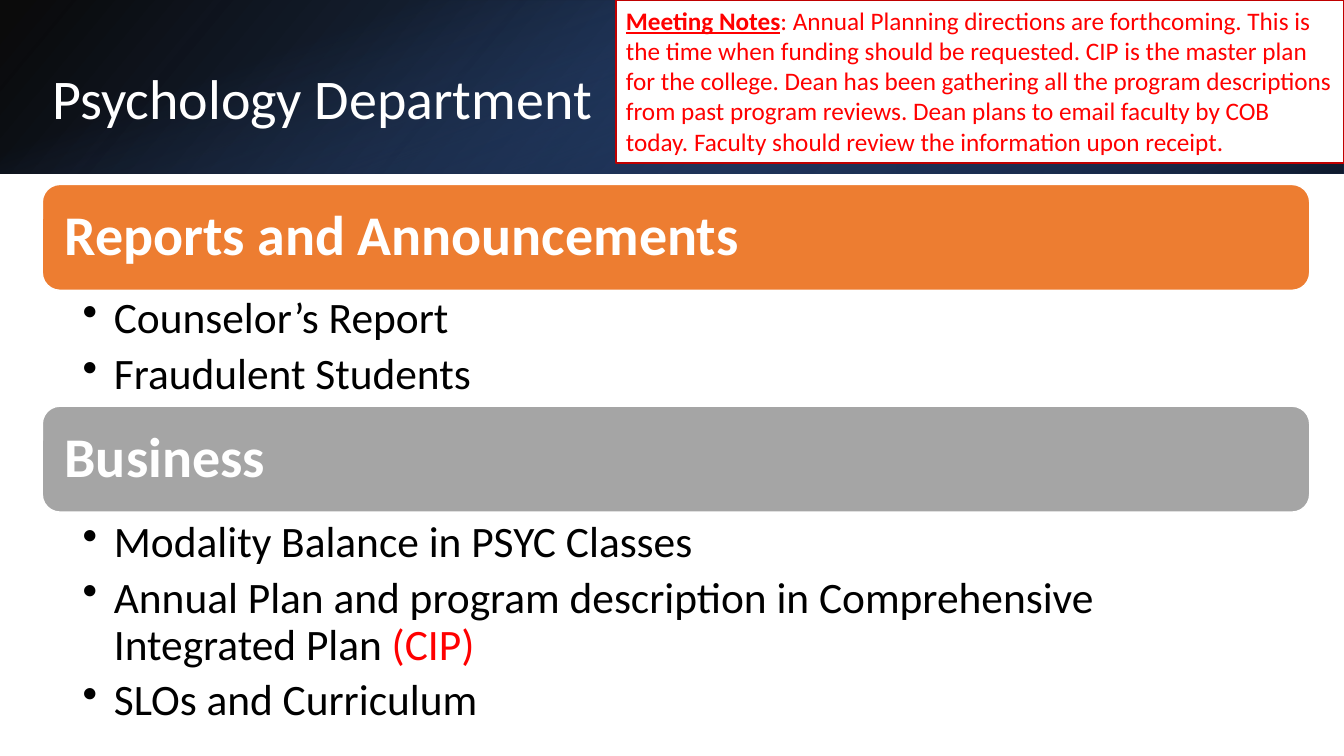
from pptx import Presentation
from pptx.dml.color import RGBColor
from pptx.enum.shapes import MSO_SHAPE as Preset
from pptx.enum.text import MSO_ANCHOR as Anchor, PP_ALIGN as Align
from pptx.oxml.ns import qn
from pptx.oxml.xmlchemy import OxmlElement
from pptx.util import Inches, Pt

WHITE, BLACK, RED = "FFFFFF", "000000", "FF0000"
FONT = "Calibri"

HEADER_LAYERS = [
    dict(at=(0, 0, 13.33, 1.72), flip=True, turn=0, angle=140,
         stops=[(0, BLACK, 96), (100, "2F5597", 100)]),
    dict(at=(8.89, 0, 4.44, 1.72), flip=True, turn=180, angle=320,
         stops=[(19, "203864", 68), (100, "4472C4", 79)]),
    dict(at=(5.8, -5.8, 1.72, 13.33), flip=False, turn=90, angle=340,
         stops=[(23, "4472C4", 0), (99, BLACK, 74)]),
]
TITLE = "Psychology Department"
SECTIONS = [
    dict(top=1.83, heading="Reports and Announcements", color="ED7D31",
         list_top=2.88, list_height=1.18,
         items=[[("Counselor’s Report", BLACK)],
                [("Fraudulent Students", BLACK)]]),
    dict(top=4.03, heading="Business", color="A5A5A5",
         list_top=5.1, list_height=2.22,
         items=[[("Modality Balance in PSYC Classes", BLACK)],
                [("Annual Plan and program description in Comprehensive "
                  "Integrated Plan ", BLACK), ("(CIP)", RED)],
                [("SLOs and Curriculum", BLACK)]]),
]
NOTES_LABEL = "Meeting Notes"
NOTES_TEXT = (
    ": Annual Planning directions are forthcoming. This is the time when "
    "funding should be requested. CIP is the master plan for the college. "
    "Dean has been gathering all the program descriptions from past program "
    "reviews. Dean plans to email faculty by COB today. Faculty should review "
    "the information upon receipt."
)
LEFT, WIDTH, BAR_HEIGHT = 0.42, 12.57, 1.05
BULLET_INDENT = 0.31


def paint(target, color):
    target.rgb = RGBColor.from_string(color)


def add_box(page, preset, at, fill=None, line=None, line_width=1):
    box = page.shapes.add_shape(preset, *map(Inches, at))
    box.shadow.inherit = False
    if fill:
        box.fill.solid()
        paint(box.fill.fore_color, fill)
    if line:
        paint(box.line.color, line)
        box.line.width = Pt(line_width)
    else:
        box.line.fill.background()
    return box


def add_header_layer(page, at, flip, turn, angle, stops):
    layer = add_box(page, Preset.RECTANGLE, at)
    layer.rotation = turn
    properties = layer.element.spPr
    if flip:
        properties.find(qn("a:xfrm")).set("flipH", "1")
    layer.fill.gradient()
    layer.fill.gradient_angle = 360 - angle
    for stop, (position, color, opacity) in zip(layer.fill.gradient_stops, stops):
        stop.position = position / 100
        paint(stop.color, color)
    for node, (_, _, opacity) in zip(properties.iter(qn("a:srgbClr")), stops):
        alpha = OxmlElement("a:alpha")
        alpha.set("val", str(opacity * 1000))
        node.append(alpha)


def set_frame(box, margins=(0.1, 0.05, 0.1, 0.05), anchor=Anchor.MIDDLE):
    frame = box.text_frame
    frame.word_wrap = True
    frame.vertical_anchor = anchor
    (frame.margin_left, frame.margin_top,
     frame.margin_right, frame.margin_bottom) = map(Inches, margins)
    return frame


def add_text(para, text, size, color, bold=False, underline=False, spacing=0.9):
    para.alignment = Align.LEFT
    para.line_spacing = spacing
    span = para.add_run()
    span.text = text
    span.font.name = FONT
    span.font.size = Pt(size)
    span.font.bold = bold
    span.font.underline = underline
    paint(span.font.color, color)


def add_bullet(para):
    properties = para._p.get_or_add_pPr()
    properties.set("marL", str(Inches(BULLET_INDENT)))
    properties.set("indent", str(-Inches(BULLET_INDENT)))
    bullet = OxmlElement("a:buChar")
    bullet.set("char", "•")
    properties.append(bullet)


def add_section(page, top, heading, color, list_top, list_height, items):
    bar = add_box(page, Preset.ROUNDED_RECTANGLE, (LEFT, top, WIDTH, BAR_HEIGHT),
                  fill=color, line=WHITE)
    frame = set_frame(bar, (0.17,) * 4)
    add_text(frame.paragraphs[0], heading, 40, WHITE, bold=True)

    box = page.shapes.add_textbox(*map(Inches, (LEFT, list_top, WIDTH, list_height)))
    frame = set_frame(box, (0.4, 0.06, 0.31, 0.06), Anchor.TOP)
    for index, spans in enumerate(items):
        para = frame.add_paragraph() if index else frame.paragraphs[0]
        para.level = 1
        para.space_after = Pt(6.2)
        for text, span_color in spans:
            add_text(para, text, 31, span_color)
        add_bullet(para)


def main():
    deck = Presentation()
    deck.slide_width, deck.slide_height = Inches(13.33), Inches(7.5)
    page = deck.slides.add_slide(deck.slide_layouts[6])

    for layer in HEADER_LAYERS:
        add_header_layer(page, **layer)

    title = page.shapes.add_textbox(*map(Inches, (LEFT, 0.53, 10.98, 0.96)))
    add_text(set_frame(title).paragraphs[0], TITLE, 40, WHITE)

    for section in SECTIONS:
        add_section(page, **section)

    notes = add_box(page, Preset.RECTANGLE, (6.11, 0, 7.22, 1.62),
                    fill=WHITE, line="C00000", line_width=1.25)
    para = set_frame(notes, anchor=Anchor.TOP).paragraphs[0]
    add_text(para, NOTES_LABEL, 18, RED, bold=True, underline=True, spacing=1.0)
    add_text(para, NOTES_TEXT, 18, RED, spacing=1.0)

    deck.save("out.pptx")


if __name__ == "__main__":
    main()
